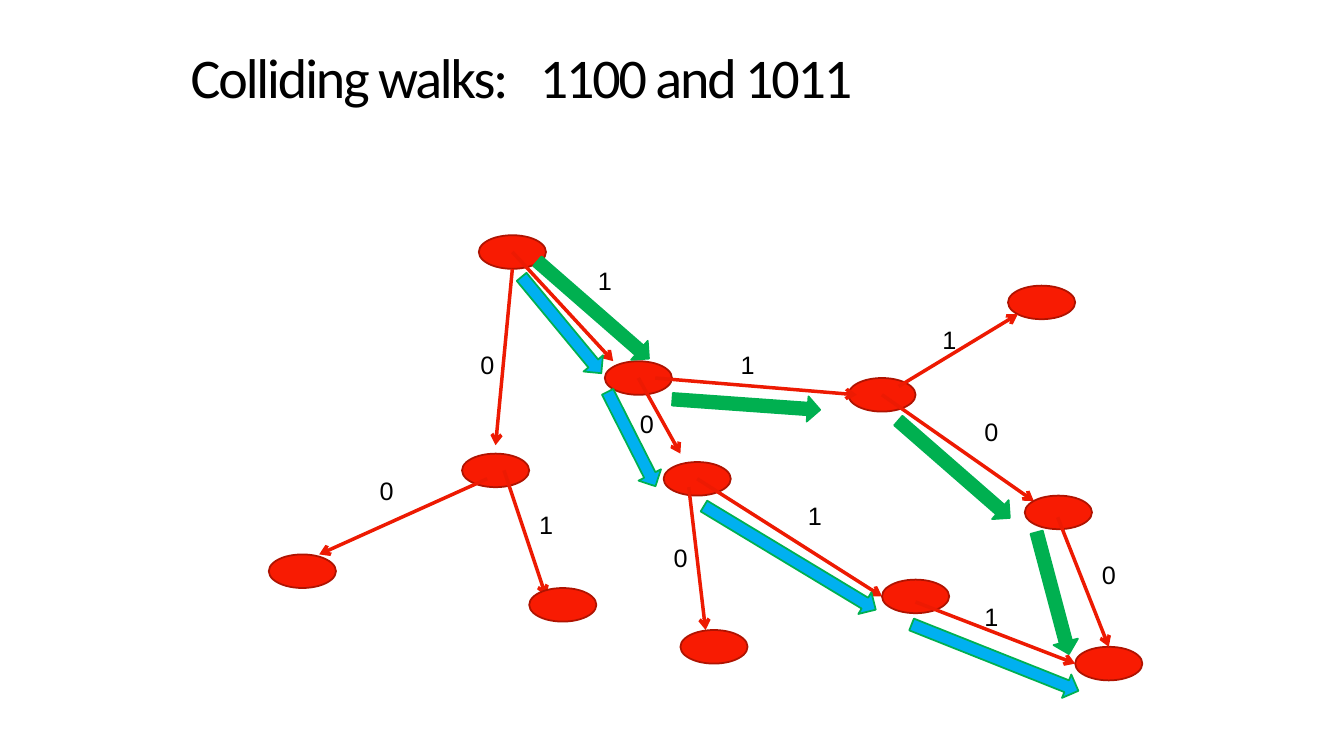
import pptx
import pptx.util
import pptx.dml.color
import pptx.enum.shapes
import pptx.enum.text
import pptx.oxml
import pptx.oxml.ns

Pt = pptx.util.Pt
SHAPES = pptx.enum.shapes.MSO_SHAPE
NODE_WIDTH, NODE_HEIGHT = 48, 24
GREEN, BLUE = "00B050", "00B0F0"


def color(hex_string):
    return pptx.dml.color.RGBColor.from_string(hex_string)


def add_filled_shape(kind, left, top, width, height, fill, line):
    shape = slide.shapes.add_shape(kind, Pt(left), Pt(top), Pt(width), Pt(height))
    shape.shadow.inherit = False
    shape.fill.solid()
    shape.fill.fore_color.rgb = color(fill)
    shape.line.color.rgb = color(line)
    shape.line.width = Pt(1.25)
    return shape


presentation = pptx.Presentation()
presentation.slide_width, presentation.slide_height = Pt(960), Pt(540)
slide = presentation.slides.add_slide(presentation.slide_layouts[5])

# Title, with a wider gap after the colon
title = slide.shapes.title
title.left, title.top, title.width, title.height = Pt(10), Pt(-1.4), Pt(725), Pt(119.5)
frame = title.text_frame
frame.word_wrap = True
frame.vertical_anchor = pptx.enum.text.MSO_ANCHOR.MIDDLE
frame.margin_left = frame.margin_right = frame.margin_top = frame.margin_bottom = Pt(18)
paragraph = frame.paragraphs[0]
paragraph.alignment = pptx.enum.text.PP_ALIGN.CENTER
paragraph.line_spacing = 0.85
for text, spacing in [("Colliding walks:", -150), (" ", 1350), ("1100 and 1011", -150)]:
    run = paragraph.add_run()
    run.text = text
    run.font.name = "Calibri"
    run.font.size = Pt(40)
    run.font.color.rgb = color("000000")
    run.font._element.set("spc", str(spacing))

# Tree in layers from back to front: nodes (left, top), then edges (from, to)
layers = [
    (
        [(342, 168), (720, 204), (330, 324), (474, 330), (432, 258), (606, 270)],
        [
            (468, 270, 612, 282),
            (366, 180, 438, 258),
            (366, 192, 354, 318),
            (456, 270, 486, 324),
            (642, 276, 727, 224.5),
            (360, 336, 390, 426),
            (498, 342, 630, 426),
            (492, 348, 504, 450),
            (348, 342, 228, 396),
            (630, 282, 738.5, 358),
        ],
    ),
    (
        [(378, 420), (486, 450), (630, 414), (732, 354), (192, 396), (768, 462)],
        [(654, 430, 768, 474), (755.5, 369.5, 792, 462)],
    ),
]
for nodes, edges in layers:
    for left, top in nodes:
        add_filled_shape(SHAPES.OVAL, left, top, NODE_WIDTH, NODE_HEIGHT, "F81B02", "AF1301")
    for ends in edges:
        edge = slide.shapes.add_connector(
            pptx.enum.shapes.MSO_CONNECTOR.STRAIGHT, *[Pt(end) for end in ends])
        edge.line.color.rgb = color("ED1A02")
        edge.line.width = Pt(2.5)
        arrowhead = pptx.oxml.parse_xml(
            '<a:tailEnd %s type="arrow"/>' % pptx.oxml.ns.nsdecls("a"))
        edge.line._get_or_add_ln().append(arrowhead)
        edge._element.spPr.append(
            pptx.oxml.parse_xml("<a:effectLst %s/>" % pptx.oxml.ns.nsdecls("a")))

# Bit on each edge
bit_positions = {
    "0": [(336, 246), (264, 336), (696, 294), (474, 384), (450, 288), (780, 396)],
    "1": [(420, 186), (378, 360), (570, 354), (522, 246), (666, 228), (696, 426)],
}
for bit, positions in bit_positions.items():
    for left, top in positions:
        label = slide.shapes.add_textbox(Pt(left), Pt(top), Pt(24.4), Pt(29))
        label.text_frame.word_wrap = False
        label.text_frame.text = bit
        font = label.text_frame.paragraphs[0].runs[0].font
        font.name = "Arial"
        font.size = Pt(18)
        font.color.rgb = color("000000")

# Walk 1100 in green and walk 1011 in blue: left, top, length, rotation
walks = {
    GREEN: [
        (370.8, 212.4, 105.8, 41.1),
        (480.2, 280, 105.8, 4.1),
        (628.6, 326.2, 105.8, 41.1),
        (707, 414.7, 90, 75.1),
    ],
    BLUE: [
        (413.3, 304.6, 75.6, 63.1),
        (356.4, 223.2, 89.3, 50.4),
        (492.5, 389.5, 143.3, 31.1),
        (646.6, 460.8, 128.2, 21.7),
    ],
}
for fill, steps in walks.items():
    for left, top, length, rotation in steps:
        step = add_filled_shape(SHAPES.RIGHT_ARROW, left, top, length, 18, fill, GREEN)
        step.rotation = rotation

presentation.save("out.pptx")
